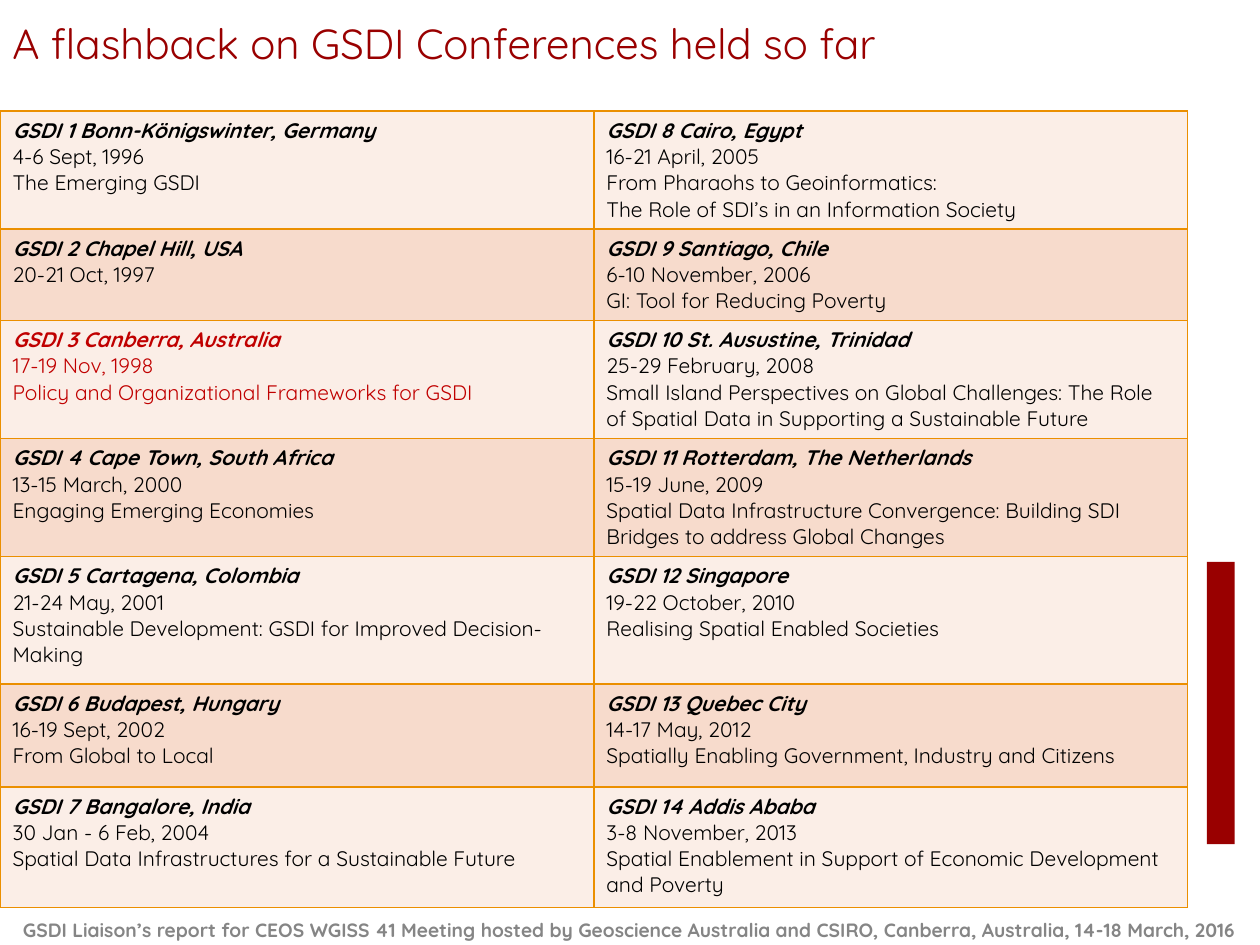
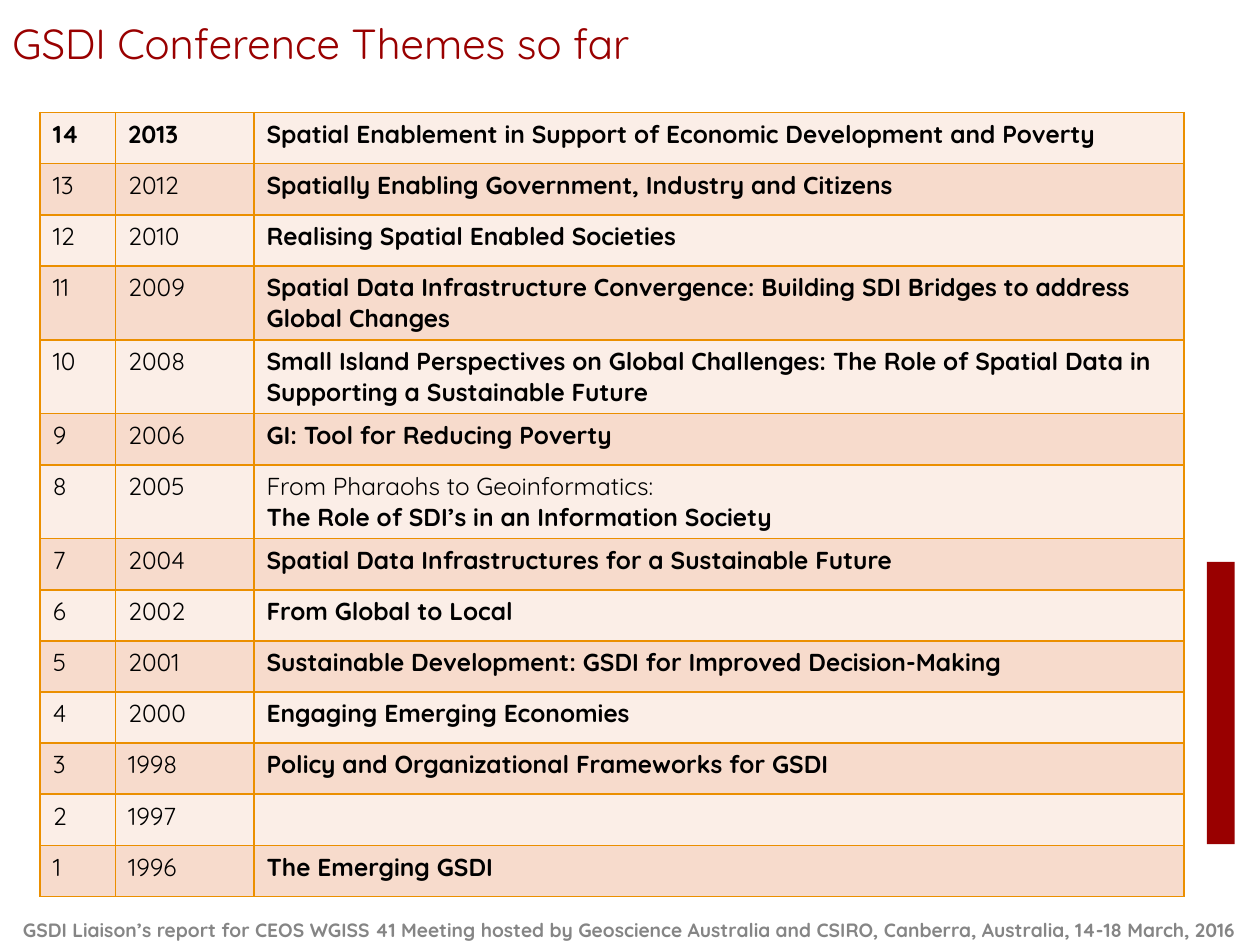
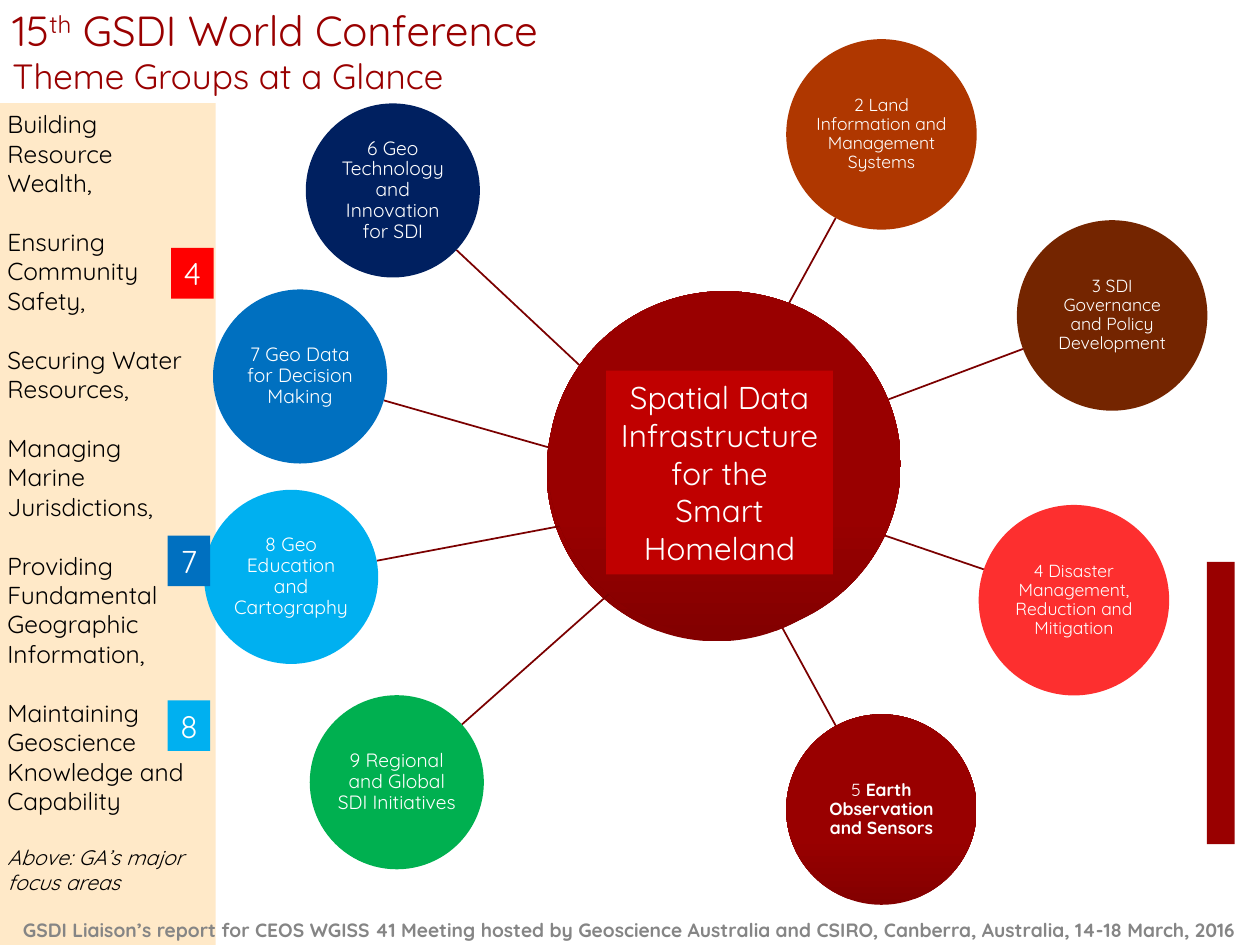
from dataclasses import dataclass
from math import hypot

from lxml.etree import SubElement
from pptx import Presentation
from pptx.dml.color import RGBColor
from pptx.enum.shapes import MSO_CONNECTOR, MSO_SHAPE
from pptx.enum.text import MSO_ANCHOR, PP_ALIGN
from pptx.oxml.ns import qn
from pptx.util import Cm, Pt


@dataclass(frozen=True)
class Theme:
    font: str = "Quicksand"
    # Colours
    red: str = "990000"
    deep_red: str = "830000"
    spoke: str = "7B0000"
    highlight: str = "C00000"
    black: str = "000000"
    white: str = "FFFFFF"
    grey: str = "858585"
    sand: str = "FFE9C8"
    border: str = "EB8F00"
    bands: tuple = ("FBEEE7", "F7DBCC")
    # Type sizes
    title: int = 24
    subtitle: int = 20
    label: int = 18
    body: int = 14
    detail: int = 12
    footer: int = 11


THEME = Theme()
FOOTER = ("GSDI Liaison’s report for CEOS WGISS 41 Meeting hosted by Geoscience Australia "
          "and CSIRO, Canberra, Australia, 14-18 March, 2016")

# Place, dates and theme lines of each conference, from the first to the latest
CONFERENCES = [
    ("Bonn-Königswinter, Germany", "4-6 Sept, 1996", ["The Emerging GSDI"]),
    ("Chapel Hill, USA", "20-21 Oct, 1997", []),
    ("Canberra, Australia", "17-19 Nov, 1998",
     ["Policy and Organizational Frameworks for GSDI"]),
    ("Cape Town, South Africa", "13-15 March, 2000", ["Engaging Emerging Economies"]),
    ("Cartagena, Colombia", "21-24 May, 2001",
     ["Sustainable Development: GSDI for Improved Decision-Making"]),
    ("Budapest, Hungary", "16-19 Sept, 2002", ["From Global to Local"]),
    ("Bangalore, India", "30 Jan - 6 Feb, 2004",
     ["Spatial Data Infrastructures for a Sustainable Future"]),
    ("Cairo, Egypt", "16-21 April, 2005",
     ["From Pharaohs to Geoinformatics:", "The Role of SDI’s in an Information Society"]),
    ("Santiago, Chile", "6-10 November, 2006", ["GI: Tool for Reducing Poverty"]),
    ("St. Ausustine, Trinidad", "25-29 February, 2008",
     ["Small Island Perspectives on Global Challenges: The Role of Spatial Data in "
      "Supporting a Sustainable Future"]),
    ("Rotterdam, The Netherlands", "15-19 June, 2009",
     ["Spatial Data Infrastructure Convergence: Building SDI Bridges to address "
      "Global Changes"]),
    ("Singapore", "19-22 October, 2010", ["Realising Spatial Enabled Societies"]),
    ("Quebec City", "14-17 May, 2012",
     ["Spatially Enabling Government, Industry and Citizens"]),
    ("Addis Ababa", "3-8 November, 2013",
     ["Spatial Enablement in Support of Economic Development and Poverty"]),
]
HOST_NUMBER = 3
TWO_LINE_THEMES = (8, 10, 11)

FOCUS_AREAS = [
    "Building Resource Wealth,",
    "Ensuring Community Safety,",
    "Securing Water Resources,",
    "Managing Marine Jurisdictions,",
    "Providing Fundamental Geographic Information,",
    "Maintaining Geoscience Knowledge and Capability",
    "Above: GA’s major focus areas",
]

# Theme groups: centre (cm), fill (None for the red gradient), runs of the label
RIGHT_THEMES = [
    ((17.77, 2.71), "AF3700", ["2 Land Information and Management Systems"]),
    ((22.42, 6.36), "742500", ["3 SDI Governance and Policy Development"]),
    ((21.65, 12.1), "FD2F2F", ["4 Disaster Management, Reduction and Mitigation"]),
    ((17.77, 16.32), None, ["5 ", "Earth Observation and Sensors"]),
]
LEFT_THEMES = [
    ((8, 15.77), "00B050", ["9 Regional and Global SDI Initiatives"]),
    ((5.87, 11.63), "00B0F0", ["8 Geo Education and Cartography"]),
    ((6.05, 7.59), "0070C0", ["7 Geo Data for Decision Making"]),
    ((7.92, 3.84), "002060", ["6 Geo Technology and Innovation for SDI"]),
]
FOCUS_TAGS = [("4", 3.45, 5, "FF0000"), ("8", 3.38, 14.12, "00B0F0"),
              ("7", 3.38, 10.8, "0070C0")]


# Text
def format_paragraph(paragraph, size, color=THEME.black, bold=False, italic=False):
    for run in paragraph.runs:
        font = run.font
        font.name, font.size = THEME.font, Pt(size)
        font.bold, font.italic = bold, italic
        font.color.rgb = RGBColor.from_string(color)


def write_lines(text_frame, lines, size, color=THEME.black, alignment=PP_ALIGN.LEFT,
                bold=False):
    text_frame.text = "\n".join(lines)
    for paragraph in text_frame.paragraphs:
        paragraph.alignment = alignment
        format_paragraph(paragraph, size, color, bold)
    return text_frame.paragraphs


def add_text(slide, left, top, width, height, lines, size, color, anchor, **options):
    box = slide.shapes.add_textbox(Cm(left), Cm(top), Cm(width), Cm(height))
    box.text_frame.word_wrap = True
    box.text_frame.vertical_anchor = anchor
    return write_lines(box.text_frame, lines, size, color, **options)


# Shapes
def add_filled(slide, kind, left, top, width, height, color=None):
    """Add a borderless shape; without a colour it takes the red gradient."""
    shape = slide.shapes.add_shape(kind, Cm(left), Cm(top), Cm(width), Cm(height))
    shape.shadow.inherit = False
    shape.line.fill.background()
    if color:
        shape.fill.solid()
        shape.fill.fore_color.rgb = RGBColor.from_string(color)
    else:
        shape.fill.gradient()
        shape.fill.gradient_angle = 90
        stops = ((0, THEME.deep_red), (0.35, THEME.red))
        for stop, (position, stop_color) in zip(shape.fill.gradient_stops, stops):
            stop.position = position
            stop.color.rgb = RGBColor.from_string(stop_color)
    return shape


def add_label(slide, left, top, width, height, lines, color):
    shape = add_filled(slide, MSO_SHAPE.RECTANGLE, left, top, width, height, color)
    shape.text_frame.word_wrap = False
    shape.text_frame.vertical_anchor = MSO_ANCHOR.MIDDLE
    write_lines(shape.text_frame, lines, THEME.label, THEME.white, PP_ALIGN.CENTER)


def add_theme_circle(slide, center, diameter, color, parts, size):
    x, y = center
    circle = add_filled(slide, MSO_SHAPE.OVAL, x - diameter / 2, y - diameter / 2,
                        diameter, diameter, color)
    frame = circle.text_frame
    frame.word_wrap = True
    frame.vertical_anchor = MSO_ANCHOR.MIDDLE
    frame.margin_left = frame.margin_right = Cm(0.03)
    frame.margin_top = frame.margin_bottom = Cm(0.03)
    paragraph = frame.paragraphs[0]
    paragraph.alignment = PP_ALIGN.CENTER
    paragraph.line_spacing = 0.9
    for part in parts:
        paragraph.add_run().text = part
    format_paragraph(paragraph, size, THEME.white)
    for run in paragraph.runs[1:]:
        run.font.bold = True


def add_spoke(slide, origin, center, radius, start=2.54):
    """Draw a line along the ray from origin to center, ending on the circle."""
    dx, dy = center[0] - origin[0], center[1] - origin[1]
    length = hypot(dx, dy)
    points = [Cm(base + delta * distance / length)
              for distance in (start, length - radius)
              for base, delta in zip(origin, (dx, dy))]
    spoke = slide.shapes.add_connector(MSO_CONNECTOR.STRAIGHT, *points)
    spoke.line.color.rgb = RGBColor.from_string(THEME.spoke)
    spoke.line.width = Pt(1)
    SubElement(spoke._element.spPr, qn("a:effectLst"))


def add_theme_wheel(slide, origin, hub, diameter, size, themes):
    for center, _, _ in themes:
        add_spoke(slide, origin, center, diameter / 2)
    add_filled(slide, MSO_SHAPE.OVAL, *hub)
    for center, color, parts in themes:
        add_theme_circle(slide, center, diameter, color, parts, size)


# Tables
def add_cell_borders(cell):
    properties = cell._tc.get_or_add_tcPr()
    for side in ("lnL", "lnR", "lnT", "lnB"):
        line = SubElement(properties, qn(f"a:{side}"), w=str(Pt(1)))
        SubElement(SubElement(line, qn("a:solidFill")), qn("a:srgbClr"), val=THEME.border)


def add_banded_table(slide, left, top, widths, heights):
    table = slide.shapes.add_table(len(heights), len(widths), Cm(left), Cm(top),
                                   Cm(sum(widths)), Cm(sum(heights))).table
    table.first_row = table.horz_banding = False
    for column, width in zip(table.columns, widths):
        column.width = Cm(width)
    for index, (row, height) in enumerate(zip(table.rows, heights)):
        row.height = Cm(height)
        for cell in row.cells:
            add_cell_borders(cell)
            cell.fill.solid()
            cell.fill.fore_color.rgb = RGBColor.from_string(THEME.bands[index % 2])
    return table


# Shared slide frame
def add_slide(presentation):
    slide = presentation.slides.add_slide(presentation.slide_layouts[6])
    add_filled(slide, MSO_SHAPE.RECTANGLE, 24.33, 11.33, 0.56, 5.69, THEME.red)
    return slide


def add_title(slide, lines, top=0, height=1.5):
    return add_text(slide, 0, top, 19.35, height, lines, THEME.title, THEME.red,
                    MSO_ANCHOR.BOTTOM)


def add_footer(slide):
    add_text(slide, 0, 18.29, 25.4, 0.89, [FOOTER], THEME.footer, THEME.grey,
             MSO_ANCHOR.MIDDLE, alignment=PP_ALIGN.CENTER, bold=True)


# Slides
def build_flashback(presentation):
    slide = add_slide(presentation)
    add_title(slide, ["A flashback on GSDI Conferences held so far"])
    heights = [2.38, 1.84, 2.38, 2.38, 2.57, 2.07, 2.43]
    table = add_banded_table(slide, 0, 2.24, [11.97] * 2, heights)
    for index, (place, dates, themes) in enumerate(CONFERENCES):
        column, row = divmod(index, len(heights))
        number = index + 1
        color = THEME.highlight if number == HOST_NUMBER else THEME.black
        paragraphs = write_lines(table.cell(row, column).text_frame,
                                 [f"GSDI {number} {place}", dates, *themes],
                                 THEME.detail, color)
        format_paragraph(paragraphs[0], THEME.detail, color, bold=True, italic=True)
    add_footer(slide)


def build_themes(presentation):
    slide = add_slide(presentation)
    add_title(slide, ["GSDI Conference Themes so far"])
    add_footer(slide)
    count = len(CONFERENCES)
    heights = [1.49 if number in TWO_LINE_THEMES else 1.03 for number in range(count, 0, -1)]
    table = add_banded_table(slide, 0.81, 2.27, [1.52, 2.79, 18.75], heights)
    for row, (_, dates, themes) in enumerate(reversed(CONFERENCES)):
        latest = row == 0
        for column, lines in enumerate(([str(count - row)], [dates[-4:]], themes)):
            paragraphs = write_lines(table.cell(row, column).text_frame, lines,
                                     THEME.body, bold=latest)
            if column == 2:
                format_paragraph(paragraphs[-1], THEME.body, bold=True)


def add_focus_areas(slide):
    panel = add_filled(slide, MSO_SHAPE.RECTANGLE, -0.1, 2.08, 4.45, 17.45, THEME.sand)
    panel.text_frame.word_wrap = True
    panel.text_frame.vertical_anchor = MSO_ANCHOR.TOP
    paragraphs = write_lines(panel.text_frame, FOCUS_AREAS, THEME.body)
    for paragraph in paragraphs[1:]:
        paragraph.space_before = Pt(16.8)
    format_paragraph(paragraphs[-1], THEME.detail, italic=True)


def build_theme_groups(presentation):
    slide = add_slide(presentation)
    add_focus_areas(slide)

    # Two-line title with a raised ordinal
    heading, subheading = add_title(slide, ["15", "Theme Groups at a Glance"], 0.43, 1.65)
    ordinal = heading.add_run()
    ordinal.text = "th"
    heading.add_run().text = " GSDI World Conference"
    format_paragraph(heading, THEME.title, THEME.red)
    ordinal.font._element.set("baseline", "30000")
    format_paragraph(subheading, THEME.subtitle, THEME.red)
    add_footer(slide)

    # Theme circles around the hub
    add_theme_wheel(slide, (14.05, 9.5), (11.02, 6.07, 6.86, 6.86), 3.84, 10, RIGHT_THEMES)
    add_theme_wheel(slide, (14.5, 10), (11.05, 5.87, 7.11, 6.96), 3.51, 11, LEFT_THEMES)
    add_label(slide, 12.22, 7.47, 4.57, 4.11,
              ["Spatial Data", "Infrastructure", "for the", "Smart", "Homeland"],
              THEME.highlight)

    # Theme numbers beside the focus areas
    for number, left, top, color in FOCUS_TAGS:
        add_label(slide, left, top, 0.86, 1.02, [number], color)


def main():
    presentation = Presentation()
    presentation.slide_width, presentation.slide_height = Cm(25.4), Cm(19.05)
    build_flashback(presentation)
    build_themes(presentation)
    build_theme_groups(presentation)
    presentation.save("out.pptx")


if __name__ == "__main__":
    main()
